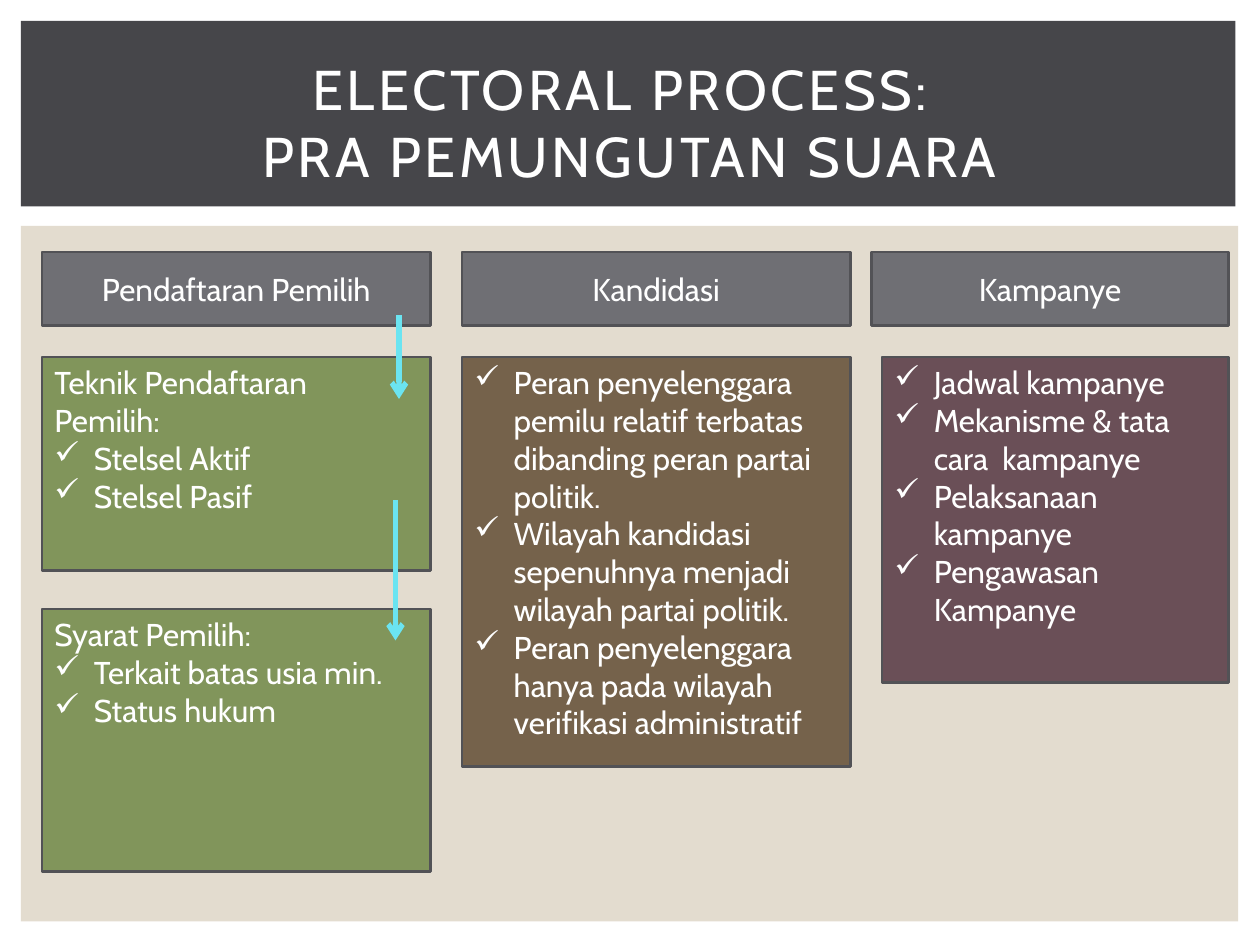
import pptx
import pptx.dml.color
import pptx.enum.shapes
import pptx.enum.text
import pptx.oxml.ns
import pptx.util
from lxml import etree

Pt = pptx.util.Pt
Align = pptx.enum.text.PP_ALIGN
Anchor = pptx.enum.text.MSO_ANCHOR

# Content: bounds are left, top, width, height in points
FONT, WHITE, EDGE, ARROW = "Cabin", "FFFFFF", "525256", "6BE4F1"
CHECK, INDENT = "✓", 22.5

TITLE = "ELECTORAL PROCESS: \vPRA PEMUNGUTAN SUARA"
PANELS = [
    ((12, 129, 695.5, 397.5), "E3DCCF"),
    ((12, 12, 694, 106), "46464A"),
]
HEADER_TOP, HEADER_HEIGHT, HEADER_FILL = 144, 42, "6F6F74"
HEADERS = [
    ("Pendaftaran Pemilih", 24, 222),
    ("Kandidasi", 264, 222),
    ("Kampanye", 498, 204),
]
# bounds, fill, lead line, checked items
CARDS = [
    ((24, 204, 222, 122), "81955B", "Teknik Pendaftaran Pemilih:",
     ["Stelsel Aktif", "Stelsel Pasif"]),
    ((24, 348, 222, 150), "81955B", "Syarat Pemilih:",
     ["Terkait batas usia min.", "Status hukum"]),
    ((264, 204, 222, 234), "75624B", None, [
        "Peran penyelenggara pemilu relatif terbatas dibanding peran partai politik.",
        "Wilayah kandidasi sepenuhnya menjadi wilayah partai politik.",
        "Peran penyelenggara hanya pada wilayah verifikasi administratif"]),
    ((504, 204, 198, 186), "6A4F57", None, [
        "Jadwal kampanye",
        "Mekanisme & tata cara  kampanye",
        "Pelaksanaan kampanye",
        "Pengawasan Kampanye"]),
]
ARROWS = [(228, 180, 228), (226, 286, 366)]  # x, top, bottom


def color(value):
    return pptx.dml.color.RGBColor.from_string(value)


def add_element(parent, tag, **attributes):
    return etree.SubElement(parent, pptx.oxml.ns.qn(tag), attributes)


def add_rectangle(page, bounds, fill, edge=None):
    box = page.shapes.add_shape(
        pptx.enum.shapes.MSO_SHAPE.RECTANGLE, *map(Pt, bounds))
    box.shadow.inherit = False
    box.fill.solid()
    box.fill.fore_color.rgb = color(fill)
    if edge:
        box.line.color.rgb = color(edge)
        box.line.width = Pt(1.5)
    else:
        box.line.fill.background()
    return box


def write(box, lines, size=18, align=Align.LEFT, anchor=Anchor.TOP):
    """Fill a box with (text, is_checked) lines."""
    frame = box.text_frame
    frame.word_wrap = True
    frame.vertical_anchor = anchor
    for index, (text, is_checked) in enumerate(lines):
        para = frame.add_paragraph() if index else frame.paragraphs[0]
        para.text = text
        para.alignment = align
        if is_checked:
            properties = para._p.get_or_add_pPr()
            properties.set("marL", str(Pt(INDENT)))
            properties.set("indent", str(-Pt(INDENT)))
            add_element(properties, "a:buChar", char=CHECK)
        para.font.name = FONT
        para.font.size = Pt(size)
        para.font.color.rgb = color(WHITE)


def add_arrow(page, x, top, bottom):
    arrow = page.shapes.add_connector(
        pptx.enum.shapes.MSO_CONNECTOR.STRAIGHT, Pt(x), Pt(top), Pt(x), Pt(bottom))
    arrow.line.color.rgb = color(ARROW)
    arrow.line.width = Pt(3)
    add_element(arrow.line._get_or_add_ln(), "a:tailEnd", type="arrow")
    add_element(arrow._element.spPr, "a:effectLst")


def main():
    deck = pptx.Presentation()
    deck.slide_width, deck.slide_height = Pt(720), Pt(540)
    page = deck.slides.add_slide(deck.slide_layouts[6])

    # Background panels and title
    for bounds, fill in PANELS:
        add_rectangle(page, bounds, fill)
    title = page.shapes.add_textbox(Pt(30), Pt(28), Pt(660), Pt(83))
    write(title, [(TITLE, False)], 32, Align.CENTER, Anchor.MIDDLE)
    for span in title.text_frame.paragraphs[0].runs:
        span._r.get_or_add_rPr().set("spc", "200")

    # Column headers
    for text, left, width in HEADERS:
        bounds = (left, HEADER_TOP, width, HEADER_HEIGHT)
        header = add_rectangle(page, bounds, HEADER_FILL, EDGE)
        write(header, [(text, False)], align=Align.CENTER, anchor=Anchor.MIDDLE)

    # Detail cards
    for bounds, fill, lead, items in CARDS:
        lines = [(lead, False)] if lead else []
        lines += [(item, True) for item in items]
        write(add_rectangle(page, bounds, fill, EDGE), lines)

    # Arrows down the first column
    for x, top, bottom in ARROWS:
        add_arrow(page, x, top, bottom)

    deck.save("out.pptx")


if __name__ == "__main__":
    main()
